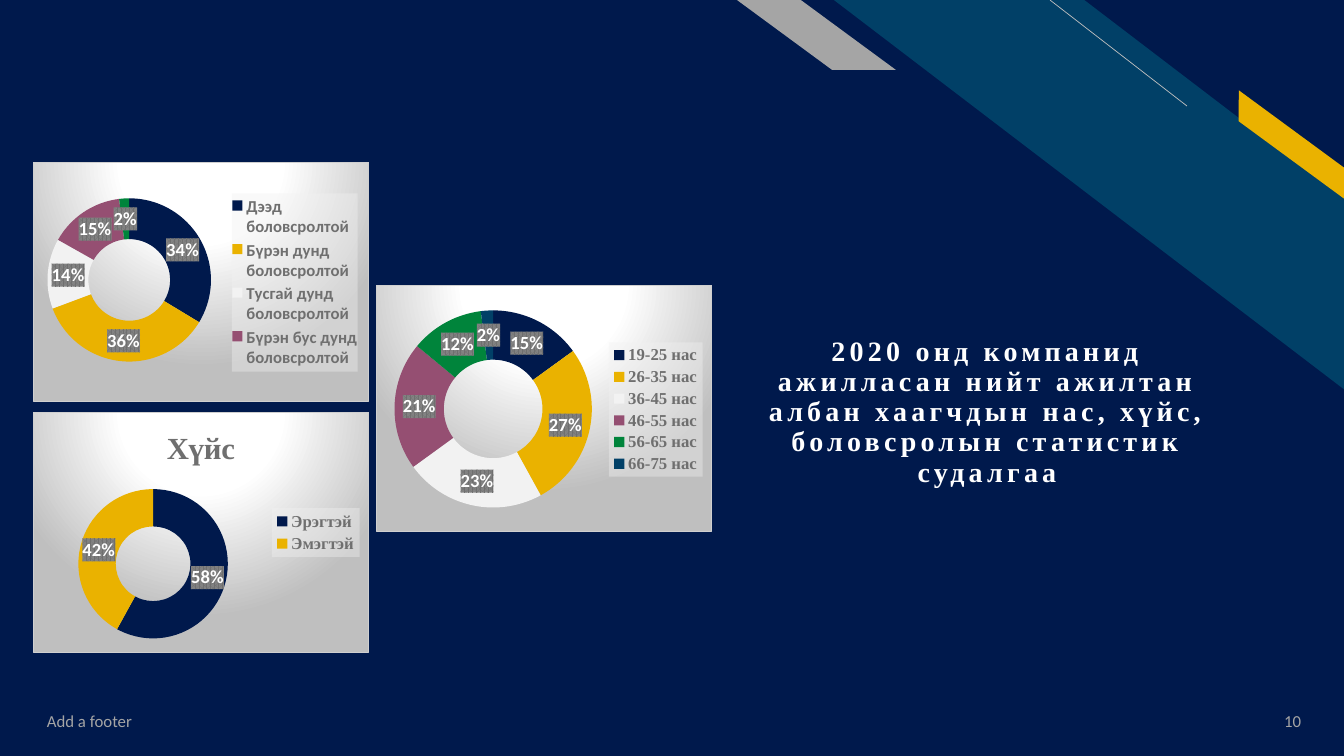
import pptx
import pptx.util
import pptx.chart.data
import pptx.dml.color
import pptx.enum.chart
import pptx.enum.shapes
import pptx.enum.text
import pptx.oxml
import pptx.oxml.ns

# Content: boxes are (left, top, width, height) in px
HEADING = ("2020 онд компанид ажилласан нийт ажилтан албан хаагчдын нас, "
           "хүйс, боловсролын статистик судалгаа")
HEADING_BOX = (745, 332, 484, 177)
CHARTS = [
    dict(box=(33, 412, 336, 241), ring=(78, 489, 150, 150),
         legend=(272, 508, 88, 49), font="Times New Roman",
         title="Хүйс", title_at=(161, 423),
         data={"Эрэгтэй": 58, "Эмэгтэй": 42}),
    dict(box=(33, 162, 336, 240), ring=(47, 198, 164, 164),
         legend=(232, 193, 126, 179), font="Calibri", title=None,
         data={"Дээд боловсролтой": 34, "Бүрэн дунд боловсролтой": 36,
               "Тусгай дунд боловсролтой": 14,
               "Бүрэн бус дунд боловсролтой": 15, "Бага боловсролтой": 2}),
    dict(box=(376, 285, 336, 247), ring=(394, 310, 198, 198),
         legend=(609, 342, 94, 135), font="Times New Roman", title=None,
         data={"19-25 нас": 15, "26-35 нас": 27, "36-45 нас": 23,
               "46-55 нас": 21, "56-65 нас": 12, "66-75 нас": 2}),
]
# text, box, alignment
LABELS = [
    ("Add a footer", (37, 701, 454, 40), "LEFT"),
    ("10", (1229, 701, 82, 40), "RIGHT"),
]
# preset, box, adjustment, rotation, colour
STRIPES = [
    ("DIAGONAL_STRIPE", (834, 0, 511, 390), 0.51, 0, "teal"),
    ("PARALLELOGRAM", (1217, 132, 149, 25), 0.72, 36.3, "gold"),
    ("PARALLELOGRAM", (737, 0, 159, 70), 1.36, 0, "gray"),
]
THIN_LINE = (1187, 106, 1050, 0)


class Theme:
    color = dict(navy="00194C", teal="014067", gold="EAB200", gray="A5A5A5",
                 white="FFFFFF", line="BFBFBF", ink="3F3F3F", legend="6F6F6F")
    slices = ["00194C", "EAB200", "F2F2F2", "954F72", "00843B", "014067"]
    size = dict(small=12, heading=20, chart=10, legend=12,
                label=13.3, chart_title=22)


CARD_FILL = """<c:spPr {ns}><a:gradFill><a:gsLst>
<a:gs pos="0"><a:srgbClr val="FFFFFF"/></a:gs><a:gs pos="39000"><a:srgbClr val="FFFFFF"/></a:gs>
<a:gs pos="100000"><a:srgbClr val="BFBFBF"/></a:gs></a:gsLst><a:path path="circle">
<a:fillToRect l="50000" t="-80000" r="50000" b="180000"/></a:path></a:gradFill>
<a:ln w="9525"><a:solidFill><a:srgbClr val="CFCFCF"/></a:solidFill></a:ln></c:spPr>"""
LEGEND_FILL = """<c:spPr {ns}><a:solidFill><a:srgbClr val="F2F2F2">
<a:alpha val="39000"/></a:srgbClr></a:solidFill><a:ln><a:noFill/></a:ln></c:spPr>"""
LABEL_FILL = """<c:spPr {ns}><a:pattFill prst="pct75"><a:fgClr><a:srgbClr val="6F6F6F"/></a:fgClr>
<a:bgClr><a:srgbClr val="828282"/></a:bgClr></a:pattFill><a:ln><a:noFill/></a:ln></c:spPr>"""


def px(n):
    return round(n * 914400 / 100.8)


def emu(box):
    return [px(n) for n in box]


def rgb(code):
    return pptx.dml.color.RGBColor.from_string(code)


def style(font, name, size, color, bold=False):
    font.name, font.bold = name, bold
    font.size = pptx.util.Pt(Theme.size[size])
    font.color.rgb = rgb(Theme.color[color])


def xml(text):
    return pptx.oxml.parse_xml(text.format(ns=pptx.oxml.ns.nsdecls("c", "a")))


def set_layout(parent, before, card, box, inner=False):
    """Place a chart part by its slide position, ahead of the child `before`."""
    for old in parent.xpath("c:layout"):
        parent.remove(old)
    fractions = [(box[0] - card[0]) / card[2], (box[1] - card[1]) / card[3]]
    fractions += [n / total for n, total in zip(box[2:], card[2:])]
    tags = '<c:layoutTarget val="inner"/>' if inner else ""
    tags += '<c:xMode val="edge"/><c:yMode val="edge"/>'
    tags += "".join(f'<c:{k} val="{v:.4f}"/>' for k, v in zip("xywh", fractions))
    layout = xml("<c:layout {ns}><c:manualLayout>" + tags + "</c:manualLayout></c:layout>")
    parent.xpath(before)[0].addprevious(layout)


def add_doughnut(s, item):
    data = pptx.chart.data.CategoryChartData()
    data.categories = list(item["data"])
    data.add_series("Series 1", list(item["data"].values()))
    kind = pptx.enum.chart.XL_CHART_TYPE.DOUGHNUT
    chart = s.shapes.add_chart(kind, *emu(item["box"]), data).chart
    style(chart.font, "Calibri", "chart", "ink")
    root = chart.element
    root.xpath("c:chart")[0].addnext(xml(CARD_FILL))

    # Title
    chart.has_title = bool(item["title"])
    if item["title"]:
        p = chart.chart_title.text_frame.paragraphs[0]
        p.text = item["title"]
        style(p.runs[0].font, item["font"], "chart_title", "legend", True)
        set_layout(root.xpath("c:chart/c:title")[0], "c:overlay", item["box"], item["title_at"])

    # Ring and percent labels
    plot = chart.plots[0]
    plot.vary_by_categories = True
    for i in range(len(item["data"])):
        part = plot.series[0].points[i].format
        part.fill.solid()
        part.fill.fore_color.rgb = rgb(Theme.slices[i])
        part.line.fill.background()
    set_layout(root.xpath("c:chart/c:plotArea")[0], "c:doughnutChart",
               item["box"], item["ring"], inner=True)
    plot.has_data_labels = True
    labels = plot.data_labels
    labels.show_percentage, labels.show_value = True, False
    labels.number_format, labels.number_format_is_linked = "0%", False
    style(labels.font, "Calibri", "label", "white", True)
    root.xpath(".//c:doughnutChart/c:dLbls/c:txPr")[0].addprevious(xml(LABEL_FILL))

    # Legend
    chart.has_legend = True
    chart.legend.position = pptx.enum.chart.XL_LEGEND_POSITION.RIGHT
    chart.legend.include_in_layout = False
    style(chart.legend.font, item["font"], "legend", "legend", True)
    legend = root.xpath("c:chart/c:legend")[0]
    set_layout(legend, "c:overlay", item["box"], item["legend"])
    legend.xpath("c:txPr")[0].addprevious(xml(LEGEND_FILL))


def add_decor(s):
    for preset, box, adj, angle, color in STRIPES:
        shape = getattr(pptx.enum.shapes.MSO_SHAPE, preset)
        sp = s.shapes.add_shape(shape, *emu(box))
        sp.adjustments[0] = adj
        sp.rotation = angle
        sp.element.spPr.xfrm.set("flipH", "1")
        sp.shadow.inherit = False
        sp.fill.solid()
        sp.fill.fore_color.rgb = rgb(Theme.color[color])
        sp.line.fill.background()
    line = s.shapes.add_connector(pptx.enum.shapes.MSO_CONNECTOR.STRAIGHT, *emu(THIN_LINE))
    line.line.color.rgb = rgb(Theme.color["line"])
    line.line.width = pptx.util.Pt(0.5)
    line.element.spPr.append(xml("<a:effectLst {ns}/>"))


def add_label(s, text, box, align):
    tf = s.shapes.add_textbox(*emu(box)).text_frame
    tf.word_wrap = True
    tf.vertical_anchor = pptx.enum.text.MSO_ANCHOR.MIDDLE
    tf.text = text
    p = tf.paragraphs[0]
    p.alignment = getattr(pptx.enum.text.PP_ALIGN, align)
    style(p.runs[0].font, "Calibri", "small", "gray")


def add_heading(s):
    sp = s.shapes.title
    sp.left, sp.top, sp.width, sp.height = emu(HEADING_BOX)
    tf = sp.text_frame
    tf.text = HEADING
    tf.word_wrap = True
    tf.auto_size = pptx.enum.text.MSO_AUTO_SIZE.NONE
    tf.vertical_anchor = pptx.enum.text.MSO_ANCHOR.TOP
    p = tf.paragraphs[0]
    p.alignment = pptx.enum.text.PP_ALIGN.CENTER
    p.line_spacing, p.space_before = 0.9, pptx.util.Pt(10)
    style(p.runs[0].font, "Times New Roman", "heading", "white", True)
    sp.element.xpath(".//a:rPr")[0].set("spc", "300")


def main():
    prs = pptx.Presentation()
    prs.slide_width, prs.slide_height = px(1344), px(756)
    s = prs.slides.add_slide(prs.slide_layouts[5])
    s.background.fill.solid()
    s.background.fill.fore_color.rgb = rgb(Theme.color["navy"])
    add_decor(s)
    for label in LABELS:
        add_label(s, *label)
    for item in CHARTS:
        add_doughnut(s, item)
    add_heading(s)
    prs.save("out.pptx")


if __name__ == "__main__":
    main()
